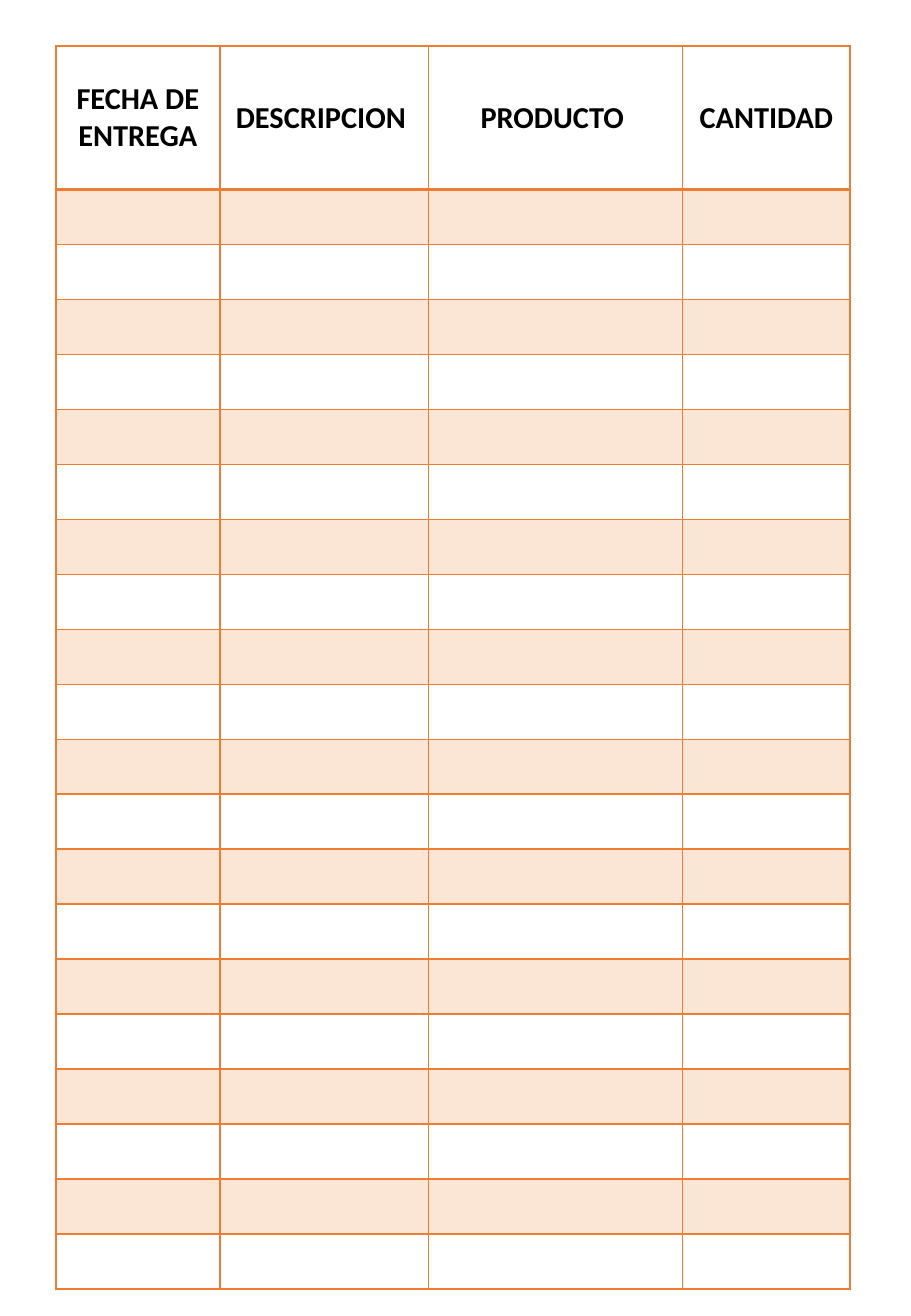
import pptx
import pptx.util
import pptx.dml.color
import pptx.enum.text
import pptx.oxml
import pptx.oxml.ns

COLORS = {"accent": "ED7D31", "text": "000000"}
HEADINGS = ["FECHA DE ENTREGA", "DESCRIPCION ", "PRODUCTO ", "CANTIDAD "]
COLUMN_WIDTHS = [1.35, 1.72, 2.09, 1.38]
HEADER_HEIGHT = 1.18
ENTRY_ROWS = 20
Inches = pptx.util.Inches


def set_borders(cell, **widths):
    """Draw the cell's sides in the accent colour, widths in points."""
    properties = cell._tc.get_or_add_tcPr()
    for side in ("L", "R", "T", "B"):
        width = pptx.util.Pt(widths.get(side, 1))
        properties.append(pptx.oxml.parse_xml(
            f'<a:ln{side} {pptx.oxml.ns.nsdecls("a")} w="{width}"><a:solidFill>'
            f'<a:srgbClr val="{COLORS["accent"]}"/></a:solidFill></a:ln{side}>'))


def set_tint(cell, percent):
    """Fill the cell with the accent colour at the given opacity."""
    cell.fill.solid()
    cell.fill.fore_color.rgb = pptx.dml.color.RGBColor.from_string(COLORS["accent"])
    color = cell._tc.tcPr.find(pptx.oxml.ns.qn("a:solidFill"))[0]
    color.append(pptx.oxml.parse_xml(
        f'<a:alpha {pptx.oxml.ns.nsdecls("a")} val="{percent * 1000}"/>'))


def write_heading(cell, heading):
    cell.vertical_anchor = pptx.enum.text.MSO_ANCHOR.MIDDLE
    cell.margin_left = cell.margin_right = Inches(0.12)
    cell.margin_top = cell.margin_bottom = Inches(0.06)
    cell.text = heading
    paragraph = cell.text_frame.paragraphs[0]
    paragraph.alignment = pptx.enum.text.PP_ALIGN.CENTER
    font = paragraph.runs[0].font
    font.name, font.size, font.bold = "Calibri", pptx.util.Pt(18), True
    font.color.rgb = pptx.dml.color.RGBColor.from_string(COLORS["text"])


def add_delivery_table(slide, left, top, width, height):
    """Delivery form: a heading row above evenly spaced, banded entry rows."""
    table = slide.shapes.add_table(
        ENTRY_ROWS + 1, len(HEADINGS),
        Inches(left), Inches(top), Inches(width), Inches(height)).table

    # Column and row sizes
    for column, share in zip(table.columns, COLUMN_WIDTHS):
        column.width = Inches(width * share / sum(COLUMN_WIDTHS))
    entry_height = (height - HEADER_HEIGHT) / ENTRY_ROWS
    for index, row in enumerate(table.rows):
        row.height = Inches(entry_height if index else HEADER_HEIGHT)

        # Borders, with a heavier rule under the headings, and banding
        for cell in row.cells:
            set_borders(cell, T=2 if index == 1 else 1, B=1 if index else 2)
            if index % 2:
                set_tint(cell, 20)
            else:
                cell.fill.background()

    # Headings
    for cell, heading in zip(table.rows[0].cells, HEADINGS):
        write_heading(cell, heading)


def main():
    presentation = pptx.Presentation()
    presentation.slide_width = Inches(7.5)
    presentation.slide_height = Inches(10.83)
    slide = presentation.slides.add_slide(presentation.slide_layouts[6])
    add_delivery_table(slide, 0.46, 0.38, 6.54, 10.23)
    presentation.save("out.pptx")


if __name__ == "__main__":
    main()
